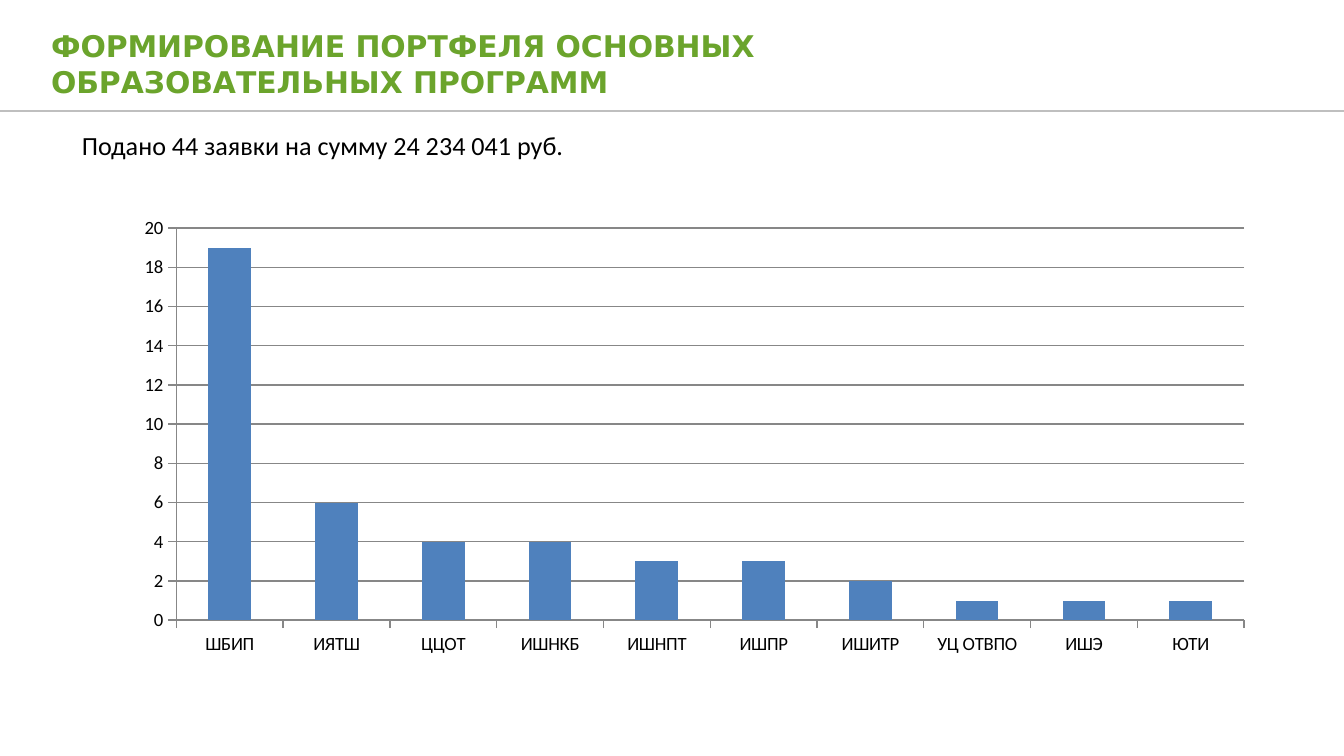
"""Build the slide on the portfolio of educational programmes with a column chart of applications."""
from dataclasses import dataclass

from lxml.etree import SubElement
from pptx import Presentation
from pptx.chart.data import CategoryChartData
from pptx.dml.color import RGBColor
from pptx.enum.chart import XL_CHART_TYPE, XL_TICK_MARK
from pptx.enum.shapes import MSO_CONNECTOR
from pptx.enum.text import MSO_ANCHOR
from pptx.oxml.ns import qn
from pptx.util import Pt

PX = 9525


@dataclass(frozen=True)
class Theme:
    title: RGBColor = RGBColor(0x6B, 0xA4, 0x2C)
    text: RGBColor = RGBColor(0, 0, 0)
    rule: RGBColor = RGBColor(0xBF, 0xBF, 0xBF)
    axis: RGBColor = RGBColor(0x87, 0x87, 0x87)
    bar: RGBColor = RGBColor(0x4F, 0x81, 0xBD)
    title_size: int = 16
    text_size: int = 14
    chart_size: int = 10
    title_font: str = "DejaVu Sans"
    body_font: str = "Calibri"


def px(*lengths):
    return [length * PX for length in lengths]


def style_font(font, name, size, color, bold=False):
    for attribute, value in {"name": name, "size": Pt(size), "bold": bold}.items():
        setattr(font, attribute, value)
    font.color.rgb = color


theme = Theme()
presentation = Presentation()
presentation.slide_width, presentation.slide_height = px(960, 540)
slide = presentation.slides.add_slide(presentation.slide_layouts[6])

texts = [
    ("ФОРМИРОВАНИЕ ПОРТФЕЛЯ ОСНОВНЫХ ОБРАЗОВАТЕЛЬНЫХ ПРОГРАММ", (27, 20, 665, 51),
     MSO_ANCHOR.MIDDLE, (theme.title_font, theme.title_size, theme.title, True)),
    ("Подано 44 заявки на сумму 24 234 041 руб.", (49, 88, 726, 55),
     MSO_ANCHOR.TOP, (theme.body_font, theme.text_size, theme.text)),
]
for text, box, anchor, font_format in texts:
    text_frame = slide.shapes.add_textbox(*px(*box)).text_frame
    text_frame.word_wrap = True
    text_frame.vertical_anchor = anchor
    paragraph = text_frame.paragraphs[0]
    run = paragraph.add_run()
    run.text = text
    style_font(run.font, *font_format)

rule = slide.shapes.add_connector(MSO_CONNECTOR.STRAIGHT, *px(960, 79, 0, 79))
rule.line.color.rgb = theme.rule
rule.line.width = Pt(1)
SubElement(rule._element.spPr, qn("a:effectLst"))

applications = {
    "ШБИП": 19, "ИЯТШ": 6, "ЦЦОТ": 4, "ИШНКБ": 4, "ИШНПТ": 3,
    "ИШПР": 3, "ИШИТР": 2, "УЦ ОТВПО": 1, "ИШЭ": 1, "ЮТИ": 1,
}
chart_data = CategoryChartData()
chart_data.categories = list(applications)
chart_data.add_series("Series 1", list(applications.values()))
chart = slide.shapes.add_chart(
    XL_CHART_TYPE.COLUMN_CLUSTERED, *px(87, 149, 818, 325), chart_data
).chart
chart.has_legend = False
chart.has_title = False
style_font(chart.font, theme.body_font, theme.chart_size, theme.text)

plot = chart.plots[0]
plot.gap_width = 150
plot.vary_by_categories = False
bar_fill = plot.series[0].format.fill
bar_fill.solid()
bar_fill.fore_color.rgb = theme.bar

value_axis = chart.value_axis
value_axis_format = {
    "minimum_scale": 0, "maximum_scale": 20, "major_unit": 2, "has_major_gridlines": True,
}
for attribute, value in value_axis_format.items():
    setattr(value_axis, attribute, value)
for axis in (chart.category_axis, value_axis):
    axis.major_tick_mark = XL_TICK_MARK.OUTSIDE
    axis.minor_tick_mark = XL_TICK_MARK.NONE
for lined in (chart.category_axis, value_axis, value_axis.major_gridlines):
    lined.format.line.color.rgb = theme.axis
    lined.format.line.width = Pt(0.75)

presentation.save("out.pptx")
